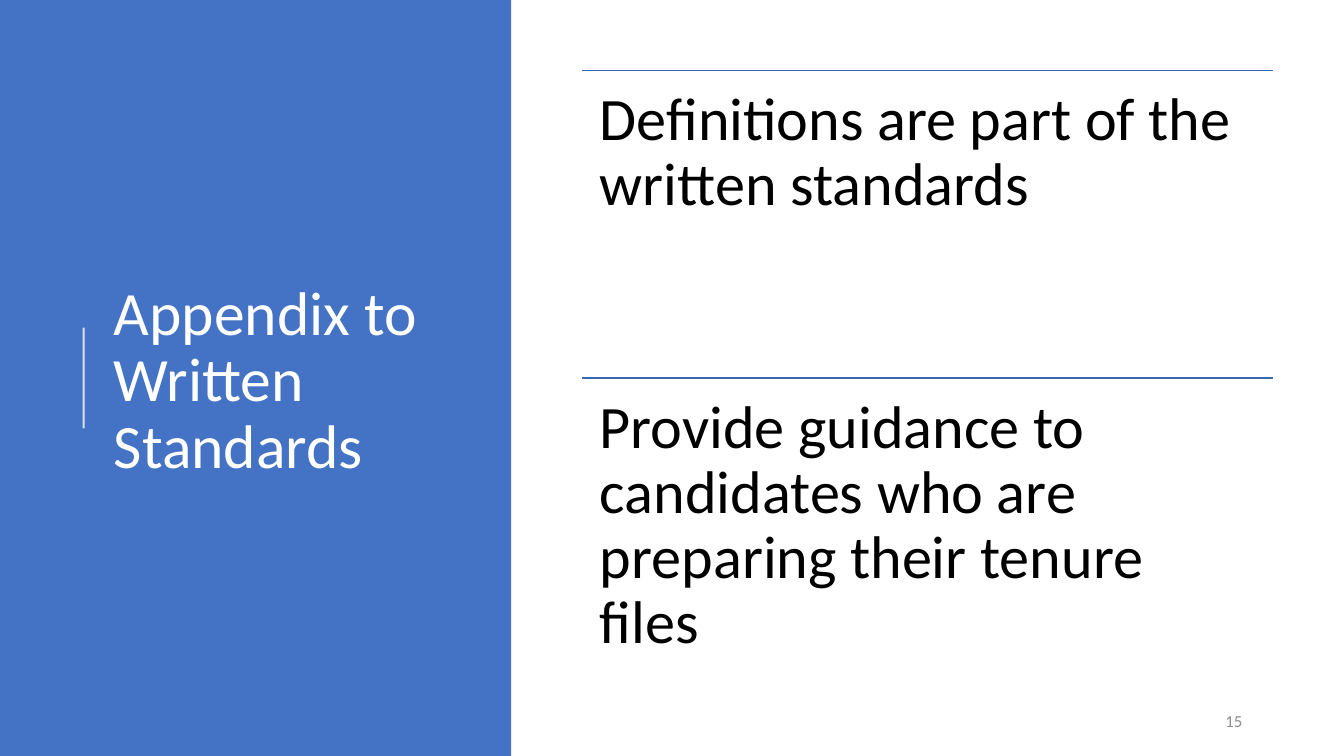
from lxml import etree
from pptx import Presentation
from pptx.dml.color import RGBColor
from pptx.enum.shapes import MSO_CONNECTOR, MSO_SHAPE
from pptx.enum.text import MSO_ANCHOR, MSO_AUTO_SIZE, PP_ALIGN
from pptx.oxml.ns import qn
from pptx.util import Pt

EMU_PER_PX = 9144
SLIDE_WIDTH, SLIDE_HEIGHT = 1333, 750
TITLE_ONLY_LAYOUT = 5
FONT = "Calibri"
STRAIGHT = MSO_CONNECTOR.STRAIGHT
RECTANGLE = MSO_SHAPE.RECTANGLE
TOP, MIDDLE = MSO_ANCHOR.TOP, MSO_ANCHOR.MIDDLE
LEFT, RIGHT = PP_ALIGN.LEFT, PP_ALIGN.RIGHT
NO_AUTOFIT = MSO_AUTO_SIZE.NONE
COLORS = {
    "panel": "4472C4",
    "rule": "3E67B2",
    "white": "FFFFFF",
    "body": "000000",
    "number": "8C8C8C",
}
STATEMENTS = [
    "Definitions are part of the written standards",
    "Provide guidance to candidates who are preparing their tenure files",
]


def px(*lengths):
    """Turn pixel lengths into a list of EMU."""
    return [length * EMU_PER_PX for length in lengths]


def color(name):
    """Return the named colour."""
    return RGBColor.from_string(COLORS[name])


def write(shape, text, size, color_name, anchor=TOP, align=LEFT, spacing=1.0):
    """Set one formatted paragraph in a shape and return it."""
    frame = shape.text_frame
    frame.text = text
    frame.word_wrap = True
    frame.auto_size = NO_AUTOFIT
    frame.vertical_anchor = anchor
    paragraph = frame.paragraphs[0]
    paragraph.alignment = align
    paragraph.line_spacing = spacing
    font = paragraph.runs[0].font
    font.name, font.size = FONT, Pt(size)
    font.color.rgb = color(color_name)
    return paragraph


def add_line(slide, start, end, color_name, width):
    """Draw a straight line without a shadow."""
    line = slide.shapes.add_connector(STRAIGHT, *px(*start, *end))
    line.line.color.rgb = color(color_name)
    line.line.width = Pt(width)
    etree.SubElement(line.element.spPr, qn("a:effectLst"))
    return line


def add_title_panel(slide, left, top, width, height):
    """Build the coloured panel with its accent line and title."""
    title = slide.shapes.title
    panel = slide.shapes.add_shape(RECTANGLE, *px(left, top, width, height))
    panel.shadow.inherit = False
    panel.fill.solid()
    panel.fill.fore_color.rgb = color("panel")
    panel.line.fill.background()
    title.element.addprevious(panel.element)

    accent_x, middle = left + 83, top + height // 2
    accent = add_line(slide, (accent_x, middle + 50), (accent_x, middle - 50), "white", 1.5)
    white = accent.element.spPr.find(".//" + qn("a:srgbClr"))
    etree.SubElement(white, qn("a:alpha"), val="80000")

    title.left, title.top, title.width, title.height = px(left + 103, top + 78, 369, 602)
    write(title, "Appendix to Written Standards", 44, "white", MIDDLE, spacing=0.9)


def add_statements(slide, left, top, width, height):
    """Stack the statements in equal rows, each under a rule."""
    row_height = height // len(STATEMENTS)
    for index, statement in enumerate(STATEMENTS):
        row_top = top + index * row_height
        add_line(slide, (left, row_top), (left + width, row_top), "rule", 1)
        box = slide.shapes.add_textbox(*px(left, row_top, width, row_height))
        frame = box.text_frame
        frame.margin_left, frame.margin_top, frame.margin_right, frame.margin_bottom = px(18, 18, 18, 18)
        write(box, statement, 43, "body", spacing=0.9)


def add_slide_number(slide, left, top, width, height):
    """Place the slide number at the right of its box."""
    box = slide.shapes.add_textbox(*px(left, top, width, height))
    write(box, "15", 12, "number", MIDDLE, RIGHT)


def main():
    """Build and save the presentation."""
    presentation = Presentation()
    presentation.slide_width, presentation.slide_height = px(SLIDE_WIDTH, SLIDE_HEIGHT)
    slide = presentation.slides.add_slide(presentation.slide_layouts[TITLE_ONLY_LAYOUT])
    add_title_panel(slide, 0, 0, 507, SLIDE_HEIGHT)
    add_statements(slide, 577, 70, 686, 610)
    add_slide_number(slide, 942, 695, 300, 40)
    presentation.save("out.pptx")


if __name__ == "__main__":
    main()
